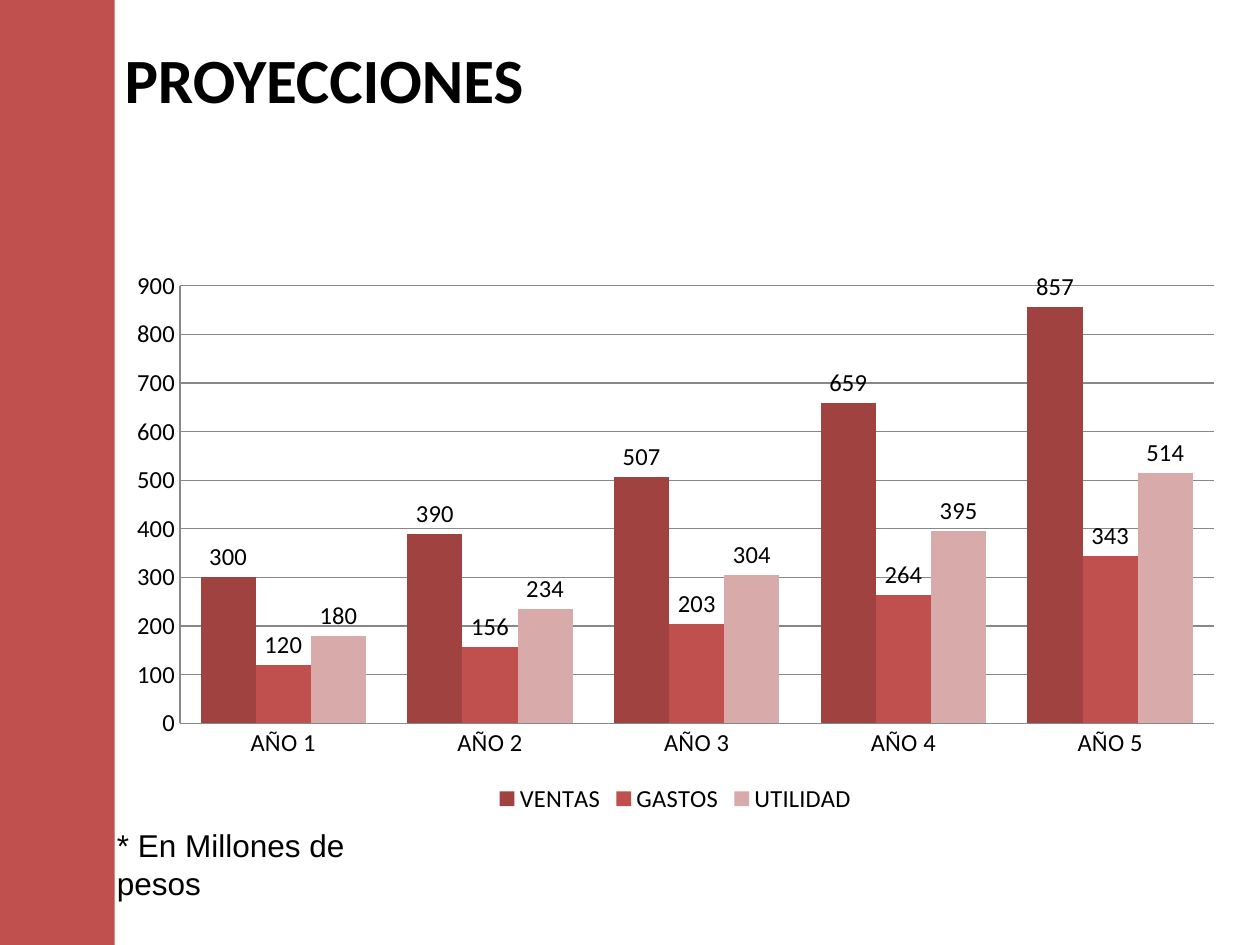
from pptx import Presentation
from pptx import util as u
from pptx.chart import data as chart_data
from pptx.dml.color import RGBColor
from pptx.enum import chart as charts, shapes, text

COLORS = {
    "band": "C0504D",
    "text": "000000",
    "axis": "888888",
    "VENTAS": "9F4240",
    "GASTOS": "C0504D",
    "UTILIDAD": "D9AAAA",
}
YEARS = [f"AÑO {number}" for number in range(1, 6)]
SERIES = {
    "VENTAS": [300, 390, 507, 659, 857],
    "GASTOS": [120, 156, 203, 264, 343],
    "UTILIDAD": [180, 234, 304, 395, 514],
}


def color(name):
    return RGBColor.from_string(COLORS[name])


def inches(box):
    return [u.Inches(length) for length in box]


def style_font(font, size, face="Calibri", bold=False):
    font.size = u.Pt(size)
    font.name = face
    font.bold = bold
    font.color.rgb = color("text")


def style_line(line):
    line.color.rgb = color("axis")
    line.width = u.Pt(0.75)


def add_band(page, box):
    band = page.shapes.add_shape(shapes.MSO_SHAPE.RECTANGLE, *inches(box))
    band.shadow.inherit = False
    band.fill.solid()
    band.fill.fore_color.rgb = color("band")
    band.line.fill.background()


def add_text(page, box, words, size, face, bold=False,
             anchor=text.MSO_ANCHOR.TOP, align=text.PP_ALIGN.LEFT):
    frame = page.shapes.add_textbox(*inches(box)).text_frame
    frame.word_wrap = True
    frame.vertical_anchor = anchor
    frame.text = words
    para = frame.paragraphs[0]
    para.alignment = align
    style_font(para.runs[0].font, size, face, bold)


def add_projection_chart(page, box):
    figures = chart_data.CategoryChartData(number_format="0")
    figures.categories = YEARS
    for name, values in SERIES.items():
        figures.add_series(name, values)
    chart = page.shapes.add_chart(
        charts.XL_CHART_TYPE.COLUMN_CLUSTERED, *inches(box), figures).chart
    chart.has_title = False
    style_font(chart.font, 14)

    # Legend
    chart.has_legend = True
    chart.legend.position = charts.XL_LEGEND_POSITION.BOTTOM
    chart.legend.include_in_layout = False
    style_font(chart.legend.font, 14)

    # Axes and gridlines
    for axis in (chart.category_axis, chart.value_axis):
        axis.major_tick_mark = charts.XL_TICK_MARK.NONE
        axis.minor_tick_mark = charts.XL_TICK_MARK.NONE
        style_font(axis.tick_labels.font, 14)
        style_line(axis.format.line)
    values_axis = chart.value_axis
    values_axis.minimum_scale = 0
    values_axis.maximum_scale = 900
    values_axis.major_unit = 100
    values_axis.tick_labels.number_format = "0"
    values_axis.tick_labels.number_format_is_linked = False
    style_line(values_axis.major_gridlines.format.line)

    # Columns with their values on top
    plot = chart.plots[0]
    plot.gap_width = 75
    plot.overlap = 0
    plot.vary_by_categories = False
    for series in plot.series:
        series.invert_if_negative = False
        series.format.fill.solid()
        series.format.fill.fore_color.rgb = color(series.name)
        labels = series.data_labels
        labels.show_value = True
        labels.position = charts.XL_LABEL_POSITION.OUTSIDE_END
        labels.number_format = "0"
        labels.number_format_is_linked = False
        style_font(labels.font, 14)


def main():
    deck = Presentation()
    deck.slide_width = u.Inches(10)
    deck.slide_height = u.Inches(7.5)
    page = deck.slides.add_slide(deck.slide_layouts[6])

    add_band(page, (0, 0, 0.91, 7.5))
    add_text(page, (0.89, 0, 9, 1.25), "PROYECCIONES", 36, "Calibri", bold=True,
             anchor=text.MSO_ANCHOR.MIDDLE, align=text.PP_ALIGN.JUSTIFY)
    add_text(page, (0.83, 6.51, 2.54, 0.4), "* En Millones de pesos", 18, "Arial")
    add_projection_chart(page, (0.91, 2.06, 8.9, 4.44))

    deck.save("out.pptx")


if __name__ == "__main__":
    main()
